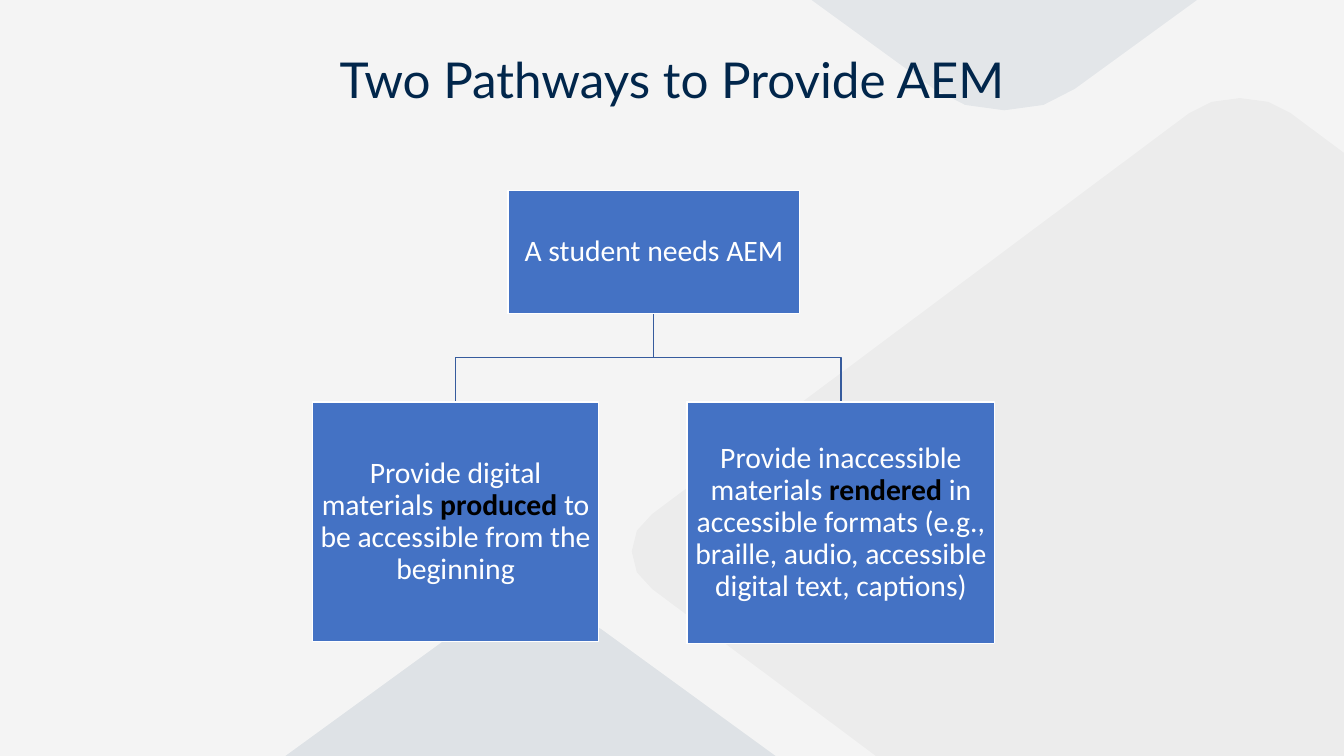
from pptx import Presentation
from pptx import util as u
from pptx.dml.color import RGBColor
from pptx.enum import shapes, text
from pptx.oxml.ns import qn
from lxml import etree

COLORS = {
    "steel": "3C6082", "gray": "A6A6A6", "navy": "01305D", "veil": "F4F4F4",
    "title": "01264B", "box": "4472C4", "line": "365B9D",
    "white": "FFFFFF", "black": "000000",
}
WIDTH, HEIGHT = 38.38, 21.59

deck = Presentation()
deck.slide_width, deck.slide_height = u.Cm(WIDTH), u.Cm(HEIGHT)
page = deck.slides.add_slide(deck.slide_layouts[6])


def add_outline(points, closed):
    corners = [(u.Cm(x), u.Cm(y)) for x, y in points]
    builder = page.shapes.build_freeform(*corners[0], scale=1.0)
    builder.add_line_segments(corners[1:], close=closed)
    outline = builder.convert_to_shape()
    outline.shadow.inherit = False
    return outline


def write_text(shape, spans, font, size):
    """Write one centred paragraph of (text, color, bold) spans."""
    frame = shape.text_frame
    frame.word_wrap = True
    para = frame.paragraphs[0]
    para.alignment = text.PP_ALIGN.CENTER
    para.line_spacing = 0.9
    for words, color, bold in spans:
        span = para.add_run()
        span.text = words
        span.font.name, span.font.size, span.font.bold = font, u.Pt(size), bold
        span.font.color.rgb = RGBColor.from_string(COLORS[color])


# Rounded background diamonds: center, half size, ends of the upper right edge
diamonds = [
    ("steel", (28.68, -3.42), (9.02, 6.57), (2.01, 5.96), (8.2, 1.46)),
    ("gray", (35.41, 15.75), (17.37, 12.95), (1.45, 12.52), (16.79, 1.07)),
    ("navy", (15.15, 28.6), (15.46, 11.25), (2.01, 10.64), (14.64, 1.45)),
]
STEPS = 4
for color, (cx, cy), (half_w, half_h), (top_x, top_y), (side_x, side_y) in diamonds:
    # Each corner bulges from the edge ends to the half size
    curve = []
    for step in range(STEPS + 1):
        t = step / STEPS
        bulge = 4 * t * (1 - t)
        sweep = (2 * t - 1) * (1 + 0.15 * bulge)
        curve.append((sweep, bulge))
    top = [(s * top_x, -top_y - b * (half_h - top_y)) for s, b in curve]
    right = [(side_x + b * (half_w - side_x), s * side_y) for s, b in curve]
    half = top + right
    points = half + [(-x, -y) for x, y in half]
    diamond = add_outline([(cx + x, cy + y) for x, y in points], True)
    diamond.fill.solid()
    diamond.fill.fore_color.rgb = RGBColor.from_string(COLORS[color])
    diamond.line.fill.background()

# Translucent veil over the diamonds
veil = page.shapes.add_shape(
    shapes.MSO_SHAPE.RECTANGLE, 0, 0, deck.slide_width, deck.slide_height)
veil.shadow.inherit = False
veil.fill.solid()
veil.fill.fore_color.rgb = RGBColor.from_string(COLORS["veil"])
veil.line.fill.background()
veil_color = veil._element.spPr.find(".//" + qn("a:srgbClr"))
etree.SubElement(veil_color, qn("a:alpha"), val="91000")

# Title
title = page.shapes.add_textbox(0, u.Cm(-1.02), deck.slide_width, u.Cm(4.27))
title.text_frame.vertical_anchor = text.MSO_ANCHOR.BOTTOM
write_text(title, [("Two Pathways to Provide AEM", "title", False)], "Lato", 40)

# Branches from the student box to the two pathways
STUDENT_X, STUDENT_BOTTOM, PATHWAY_TOP = 18.67, 8.96, 11.48
middle = (STUDENT_BOTTOM + PATHWAY_TOP) / 2
for pathway_x in (24.02, 13.0):
    branch = add_outline([(STUDENT_X, STUDENT_BOTTOM), (STUDENT_X, middle),
                          (pathway_x, middle), (pathway_x, PATHWAY_TOP)], False)
    branch.fill.background()
    branch.line.color.rgb = RGBColor.from_string(COLORS["line"])
    branch.line.width = u.Pt(1)

# Boxes: left, top, width, height, spans
boxes = [
    (14.51, 5.45, 8.33, 3.51, [("A student needs AEM", "white", False)]),
    (8.92, PATHWAY_TOP, 8.18, 6.84, [
        ("Provide digital materials ", "white", False),
        ("produced", "black", True),
        (" to be accessible from the beginning", "white", False)]),
    (19.62, PATHWAY_TOP, 8.79, 6.91, [
        ("Provide inaccessible materials ", "white", False),
        ("rendered", "black", True),
        (" in accessible formats (e.g., braille, audio, accessible digital text, "
         "captions)", "white", False)]),
]
for left, top, width, height, spans in boxes:
    box = page.shapes.add_shape(shapes.MSO_SHAPE.RECTANGLE, u.Cm(left), u.Cm(top),
                                u.Cm(width), u.Cm(height))
    box.shadow.inherit = False
    box.fill.solid()
    box.fill.fore_color.rgb = RGBColor.from_string(COLORS["box"])
    box.line.color.rgb = RGBColor.from_string(COLORS["white"])
    box.line.width = u.Pt(1)
    frame = box.text_frame
    frame.vertical_anchor = text.MSO_ANCHOR.MIDDLE
    frame.margin_left = frame.margin_right = u.Cm(0.05)
    frame.margin_top = frame.margin_bottom = u.Cm(0.05)
    write_text(box, spans, "Calibri", 24)

deck.save("out.pptx")
